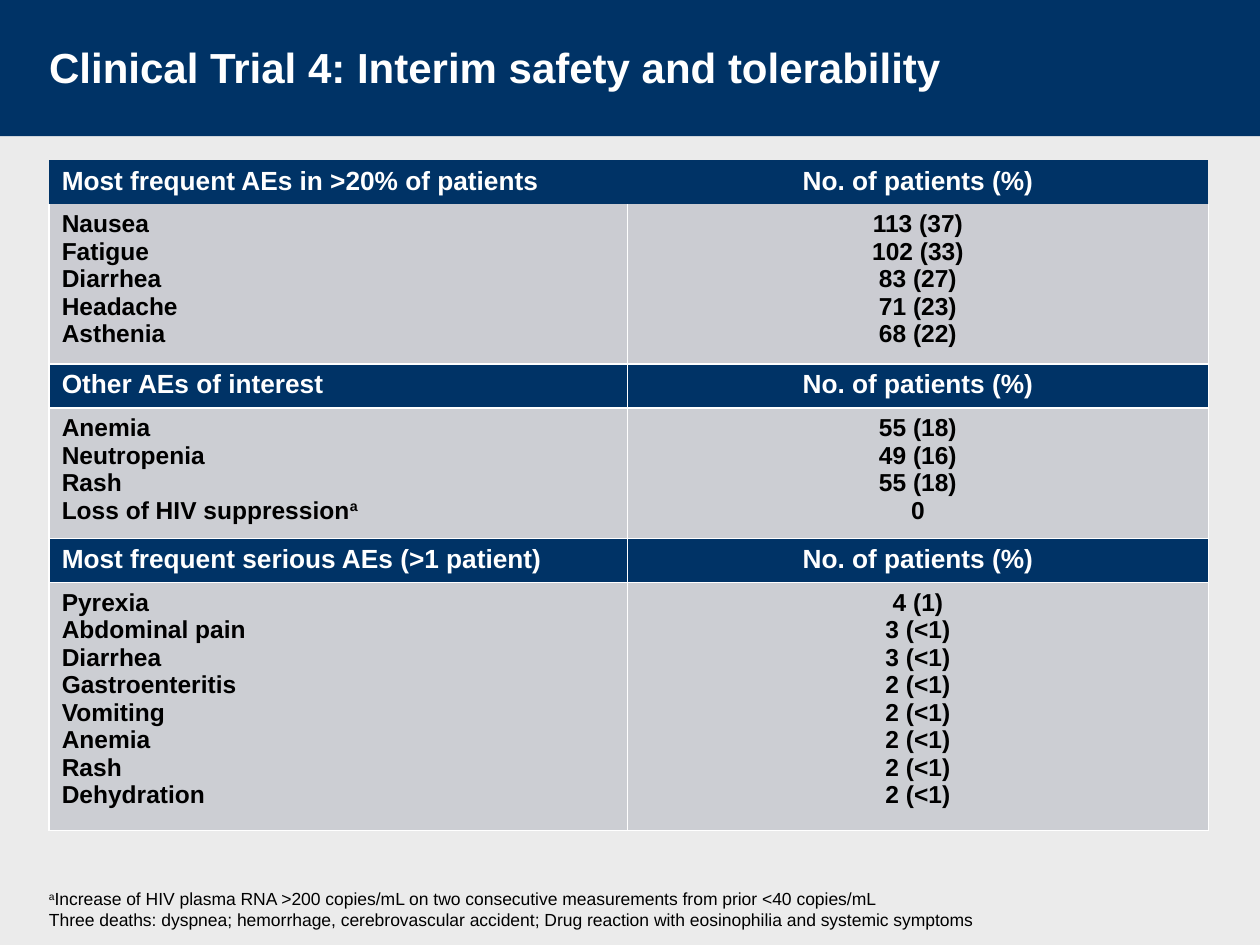
from dataclasses import dataclass

from lxml.etree import SubElement as Sub
from pptx import Presentation
from pptx.dml.color import RGBColor as Rgb
from pptx.enum.shapes import MSO_SHAPE as Shape
from pptx.enum.text import MSO_ANCHOR as Anchor, PP_ALIGN as Align
from pptx.oxml.ns import qn
from pptx.util import Inches, Pt


@dataclass(frozen=True)
class Theme:
    font: str = "Arial"
    page: str = "EBEBEB"
    navy: str = "003366"
    white: str = "FFFFFF"
    black: str = "000000"
    gray: str = "CCCED3"
    tint: str = "AAADB8"
    alpha: int = 49
    title: int = 24
    head: int = 15
    body: int = 14
    note: int = 10


T = Theme()
COUNT = "No. of patients (%)"
GROUPS = [
    ("Most frequent AEs in >20% of patients", 1.19, [
        ("Nausea", "113 (37)"),
        ("Fatigue", "102 (33)"),
        ("Diarrhea", "83 (27)"),
        ("Headache", "71 (23)"),
        ("Asthenia", "68 (22)"),
    ]),
    ("Other AEs of interest", 0.97, [
        ("Anemia", "55 (18)"),
        ("Neutropenia", "49 (16)"),
        ("Rash", "55 (18)"),
        ("Loss of HIV suppression^a", "0"),
    ]),
    ("Most frequent serious AEs (>1 patient)", 1.85, [
        ("Pyrexia", "4 (1)"),
        ("Abdominal pain", "3 (<1)"),
        ("Diarrhea", "3 (<1)"),
        ("Gastroenteritis", "2 (<1)"),
        ("Vomiting", "2 (<1)"),
        ("Anemia", "2 (<1)"),
        ("Rash", "2 (<1)"),
        ("Dehydration", "2 (<1)"),
    ]),
]
NOTES = [
    "^a^Increase of HIV plasma RNA >200 copies/mL on two consecutive "
    "measurements from prior <40 copies/mL",
    "Three deaths: dyspnea; hemorrhage, cerebrovascular accident; "
    "Drug reaction with eosinophilia and systemic symptoms",
]


def assign(item, form):
    for key, val in form.items():
        setattr(item, key, val)


def paint(fill, color):
    fill.solid()
    fill.fore_color.rgb = Rgb.from_string(color)


def write(frame, lines, size, color, bold=False, align=Align.LEFT):
    form = {"name": T.font, "size": Pt(size), "bold": bold}
    for i, line in enumerate(lines):
        para = frame.add_paragraph() if i else frame.paragraphs[0]
        para.alignment = align
        for j, part in enumerate(line.split("^")):
            if not part:
                continue
            run = para.add_run()
            run.text = part
            assign(run.font, form)
            run.font.color.rgb = Rgb.from_string(color)
            if j % 2:
                run._r.get_or_add_rPr().set("baseline", "30000")


def add_text(slide, box, lines, size, color, form, bold=False):
    frame = slide.shapes.add_textbox(*map(Inches, box)).text_frame
    assign(frame, {"word_wrap": True, **form})
    write(frame, lines, size, color, bold)


def add_band(slide):
    band = slide.shapes.add_shape(
        Shape.RECTANGLE, 0, 0, Inches(10), Inches(1.08))
    band.shadow.inherit = False
    paint(band.fill, T.navy)
    band.line.fill.background()


def edge(cell, sides):
    props = cell._tc.get_or_add_tcPr()
    for side in "LRTB":
        line = Sub(props, qn(f"a:ln{side}"), w=str(Pt(1)))
        if side in sides:
            fill = Sub(line, qn("a:solidFill"))
            Sub(fill, qn("a:srgbClr"), val=T.white)
        else:
            Sub(line, qn("a:noFill"))


def fade(cell):
    color = cell._tc.tcPr.find(qn("a:solidFill")).find(qn("a:srgbClr"))
    Sub(color, qn("a:alpha"), val=str(T.alpha * 1000))


def fill_row(table, row, high, cols, size, ink, back):
    table.rows[row].height = Inches(high)
    sides = {0: "", 1: "LRB"}.get(row, "LRTB")
    for col, (lines, align) in enumerate(zip(cols, (Align.LEFT, Align.CENTER))):
        cell = table.cell(row, col)
        edge(cell, sides)
        paint(cell.fill, back)
        if back == T.tint:
            fade(cell)
        write(cell.text_frame, lines, size, ink, True, align)


def add_grid(slide):
    box = map(Inches, (0.39, 1.27, 9.2, 5))
    table = slide.shapes.add_table(2 * len(GROUPS), 2, *box).table
    assign(table, {"first_row": False, "horz_banding": False})
    for col, wide in zip(table.columns, (4.59, 4.61)):
        col.width = Inches(wide)
    for i, (head, high, pairs) in enumerate(GROUPS):
        fill_row(table, 2 * i, 0.34, ([head], [COUNT]),
                 T.head, T.white, T.navy)
        fill_row(table, 2 * i + 1, high, zip(*pairs),
                 T.body, T.black, T.gray if i else T.tint)


def main():
    deck = Presentation()
    assign(deck, {"slide_width": Inches(10), "slide_height": Inches(7.5)})
    slide = deck.slides.add_slide(deck.slide_layouts[6])
    paint(slide.background.fill, T.page)
    add_band(slide)
    flush = dict.fromkeys(
        ("margin_left", "margin_right", "margin_top", "margin_bottom"), 0)
    add_text(slide, (0.39, 0.16, 7.41, 0.74),
             ["Clinical Trial 4: Interim safety and tolerability"],
             T.title, T.white,
             {**flush, "vertical_anchor": Anchor.MIDDLE}, True)
    add_grid(slide)
    add_text(slide, (0.29, 7, 9.28, 0.44), NOTES, T.note, T.black, {})
    deck.save("out.pptx")


if __name__ == "__main__":
    main()
